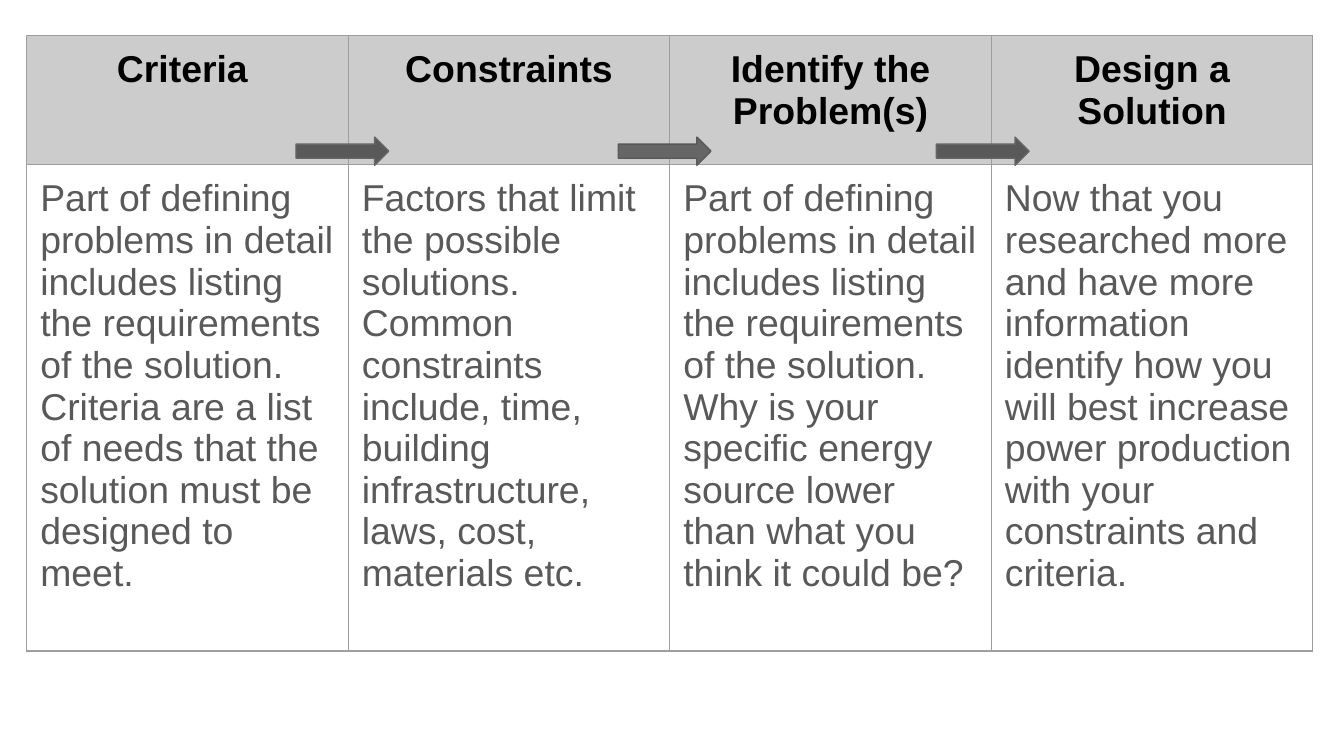
from dataclasses import dataclass

from lxml.etree import SubElement
from pptx import Presentation
from pptx.dml.color import RGBColor
from pptx.enum.shapes import MSO_SHAPE
from pptx.enum.text import PP_ALIGN
from pptx.oxml.ns import qn
from pptx.slide import Slide
from pptx.table import _Cell
from pptx.util import Emu, Pt

EMU_PER_PX = 2286  # 400 px to the inch


@dataclass(frozen=True)
class Theme:
    font: str = "Arial"
    text_size: int = 20
    line_width: float = 0.75
    heading: str = "000000"
    dark_gray: str = "595959"
    mid_gray: str = "666666"
    header_fill: str = "CCCCCC"
    border: str = "9E9E9E"


@dataclass(frozen=True)
class Step:
    title: str
    description: str


@dataclass(frozen=True)
class StepArrow:
    left: int
    fill: str
    outline: str


THEME = Theme()
SLIDE_WIDTH, SLIDE_HEIGHT = 4000, 2250
TABLE_LEFT, TABLE_TOP = 80, 106
COLUMN_WIDTH = 957
ROW_HEIGHTS = (384, 1448)
CELL_MARGIN = 40
ARROW_TOP, ARROW_WIDTH, ARROW_HEIGHT = 408, 276, 84

STEPS = (
    Step("Criteria ",
         "Part of defining problems in detail includes listing the requirements "
         "of the solution.  Criteria are a list of needs that the solution must "
         "be designed to meet."),
    Step("Constraints",
         "Factors that limit the possible solutions. Common constraints include, "
         "time, building infrastructure, laws, cost, materials etc."),
    Step("Identify the Problem(s)",
         "Part of defining problems in detail includes listing the requirements "
         "of the solution.  Why is your specific energy source lower than what "
         "you think it could be?"),
    Step("Design a Solution",
         "Now that you researched more and have more information identify how "
         "you will best increase power production with your constraints and "
         "criteria."),
)
ARROWS = (
    StepArrow(881, THEME.dark_gray, THEME.mid_gray),
    StepArrow(1840, THEME.mid_gray, THEME.dark_gray),
    StepArrow(2787, THEME.dark_gray, THEME.mid_gray),
)


def px(length: int) -> Emu:
    return Emu(length * EMU_PER_PX)


def rgb(color: str) -> RGBColor:
    return RGBColor.from_string(color)


def add_borders(cell: _Cell) -> None:
    """Outline all four sides; must run before the cell fill is set."""
    properties = cell._tc.get_or_add_tcPr()
    for side in ("a:lnL", "a:lnR", "a:lnT", "a:lnB"):
        border = SubElement(properties, qn(side), w=str(Pt(THEME.line_width)))
        fill = SubElement(border, qn("a:solidFill"))
        SubElement(fill, qn("a:srgbClr"), val=THEME.border)


def fill_cell(cell: _Cell, text: str, is_header: bool) -> None:
    add_borders(cell)
    cell.margin_left = cell.margin_right = px(CELL_MARGIN)
    cell.margin_top = cell.margin_bottom = px(CELL_MARGIN)
    if is_header:
        cell.fill.solid()
        cell.fill.fore_color.rgb = rgb(THEME.header_fill)
    else:
        cell.fill.background()
    paragraph = cell.text_frame.paragraphs[0]
    paragraph.alignment = PP_ALIGN.CENTER if is_header else PP_ALIGN.LEFT
    run = paragraph.add_run()
    run.text = text
    run.font.name = THEME.font
    run.font.size = Pt(THEME.text_size)
    run.font.bold = is_header
    run.font.color.rgb = rgb(THEME.heading if is_header else THEME.dark_gray)


def add_steps_table(slide: Slide, steps: tuple[Step, ...]) -> None:
    table = slide.shapes.add_table(
        len(ROW_HEIGHTS), len(steps), px(TABLE_LEFT), px(TABLE_TOP),
        px(COLUMN_WIDTH * len(steps)), px(sum(ROW_HEIGHTS))).table
    table.horz_banding = False
    for row, height in zip(table.rows, ROW_HEIGHTS):
        row.height = px(height)
    for index, step in enumerate(steps):
        table.columns[index].width = px(COLUMN_WIDTH)
        fill_cell(table.cell(0, index), step.title, is_header=True)
        fill_cell(table.cell(1, index), step.description, is_header=False)


def add_step_arrow(slide: Slide, step_arrow: StepArrow) -> None:
    arrow = slide.shapes.add_shape(
        MSO_SHAPE.RIGHT_ARROW, px(step_arrow.left), px(ARROW_TOP),
        px(ARROW_WIDTH), px(ARROW_HEIGHT))
    arrow.shadow.inherit = False
    arrow.fill.solid()
    arrow.fill.fore_color.rgb = rgb(step_arrow.fill)
    arrow.line.color.rgb = rgb(step_arrow.outline)
    arrow.line.width = Pt(THEME.line_width)


def main() -> None:
    presentation = Presentation()
    presentation.slide_width = px(SLIDE_WIDTH)
    presentation.slide_height = px(SLIDE_HEIGHT)
    slide = presentation.slides.add_slide(presentation.slide_layouts[6])
    add_steps_table(slide, STEPS)
    for step_arrow in ARROWS:
        add_step_arrow(slide, step_arrow)
    presentation.save("out.pptx")


if __name__ == "__main__":
    main()
